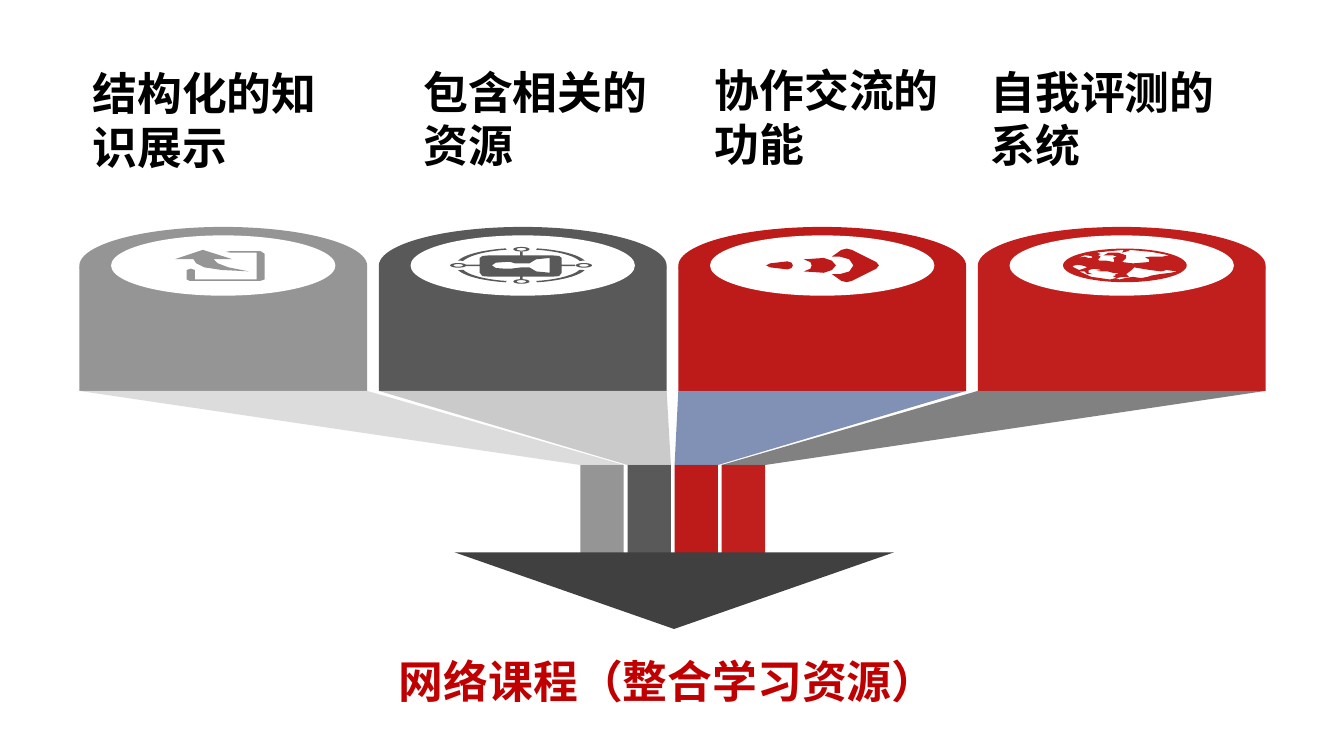
from math import cos, radians, sin

from lxml import etree
from pptx import Presentation
from pptx.dml.color import RGBColor
from pptx.enum.shapes import MSO_SHAPE
from pptx.enum.text import PP_ALIGN
from pptx.oxml.ns import qn
from pptx.util import Cm, Pt

RECTANGLE, OVAL = MSO_SHAPE.RECTANGLE, MSO_SHAPE.OVAL
LEFT, CENTER = PP_ALIGN.LEFT, PP_ALIGN.CENTER

COLORS = {
    "light": "959595", "dark": "595959", "red": "BD1A1A", "bright": "C11E1E",
    "pale": "D5D5D5", "silver": "BFBFBF", "blue": "6679A5", "gray": "666666",
    "white": "FFFFFF", "black": "000000", "arrow": "404040", "result": "C00000",
}
CJK_FONT = "Noto Sans CJK SC"
ICON_UNIT = 0.0254


def arc(cx, cy, rx, ry, start=0, end=360, step=6):
    return [(cx + rx * cos(radians(a)), cy + ry * sin(radians(a)))
            for a in range(start, end + 1, step)]


def box(left, top, right, bottom):
    return [(left, top), (right, top), (right, bottom), (left, bottom)]


SHARE = [
    [(197, 189), (197, 208), (194, 209), (141, 209), (139, 208), (139, 201), (142, 200),
     (145, 201), (145, 208), (191, 208), (191, 188), (171, 188), (168, 187.5),
     (171, 187), (194, 187)],
    [(173, 193), (151, 186), (130, 193), (144, 193), (146, 196), (152, 199), (165, 201),
     (185, 202), (170, 199), (162, 196), (159, 193)],
]
NETWORK = [
    [(365, 190), (410, 190), (416, 190.5), (418, 192), (418, 203), (416, 205.5),
     (410, 206), (365, 206), (359, 205.5), (357, 203), (357, 192), (359, 190.5)],
    [(409, 192), (399, 193), (394, 196), (388, 196), (383, 196), (380, 195), (376, 195),
     (369, 195.5), (366, 197.5), (369, 199.5), (376, 200), (380, 200), (388, 199),
     (394, 199), (399, 202), (409, 203)],
    box(387, 187, 389, 190), box(387, 206, 389, 208),
    box(347, 197, 357, 198), box(418, 197, 428, 198),
]
for cx, cy in [(388, 185.5), (388, 209.5), (341, 197.5), (434.5, 197.5)]:
    NETWORK += [arc(cx, cy, 6, 1.7), arc(cx, cy, 3.5, 1)]
for start in (16, 104, 196, 284):
    NETWORK.append(arc(388, 197.5, 49, 13, start, start + 60)
                   + arc(388, 197.5, 45, 12, start, start + 60)[::-1])
ROCKET = [
    [(626, 186), (619, 191), (625, 191), (632, 193), (635, 197.5), (632, 202), (625, 204),
     (619, 204), (626, 209), (630, 210), (634, 209), (652, 200), (654, 197.5), (652, 195),
     (634, 186), (630, 185)],
    [(590, 197.5), (589, 195.5), (586, 194.5), (573, 196), (570, 197.5), (573, 199),
     (586, 200.5), (589, 199.5)],
    [(622, 197.5), (619, 194), (613, 192), (598, 193), (603, 195), (604, 197.5), (603, 200),
     (598, 202), (613, 203), (619, 201)],
]
GLOBE = [
    arc(837, 197.5, 46, 12.5),
    [(810, 192), (807, 191), (802, 192), (807, 190), (812, 190.5), (813, 192)],
    [(850, 200), (856, 201), (864, 202), (868, 201), (876, 202), (871, 203), (863, 204),
     (857, 205), (854, 206), (849, 207), (843, 206), (837, 207), (833, 208), (830, 207),
     (826, 208), (812, 206), (803, 202), (807, 202), (809, 204), (813, 204), (810, 203),
     (810, 201), (814, 200), (820, 201), (816, 201.5), (819, 202), (824, 202), (828, 203),
     (833, 203), (830, 204), (830, 205), (828, 205.5), (831, 207), (833, 206.5), (836, 206),
     (840, 206), (838, 204), (842, 201), (844, 199)],
    [(802, 197), (807, 198), (809, 199), (803, 201), (799, 199), (798, 198)],
    [(839, 187), (841, 186), (857, 187.5), (870, 190), (865, 191), (856, 191), (852, 191.5),
     (855, 193), (855, 195), (843, 196), (835, 195), (838, 192), (838, 190), (832, 188),
     (825, 188), (821, 190), (828, 190), (831, 191), (828, 192), (829, 193), (829, 195),
     (823, 194), (818, 194), (817, 193), (819, 191), (817, 190), (819, 189), (816, 188),
     (825, 187), (836, 186), (835, 188)],
]

PILLARS = [
    {"label": "结构化的知识展示", "at": (1.5, 1.12, 5), "color": "light", "funnel": "pale",
     "icon": SHARE},
    {"label": "包含相关的资源", "at": (7.75, 1.09, 5.41), "color": "dark", "funnel": "silver",
     "icon": NETWORK},
    {"label": "协作交流的功能", "at": (13.26, 1.07, 5), "color": "red", "funnel": "blue",
     "icon": ROCKET},
    {"label": "自我评测的系统", "at": (18.47, 1.09, 5.44), "color": "bright", "funnel": "gray",
     "icon": GLOBE},
]
RESULT = "网络课程（整合学习资源）"

PILLAR_LEFT, PILLAR_PITCH, PILLAR_WIDTH = 1.5, 5.66, 5.44
PILLAR_TOP, PILLAR_BOTTOM = 5.05, 7.39
STEM_LEFT, STEM_PITCH, STEM_WIDTH = 10.97, 0.89, 0.82
STEM_TOP, STEM_HEIGHT = 8.79, 1.78
RIM_TOP, RIM_HEIGHT = 4.29, 1.47
FACE_TOP, FACE_WIDTH, FACE_HEIGHT = 4.45, 4.24, 1.14

deck = Presentation()
deck.slide_width, deck.slide_height = Cm(25.4), Cm(14.29)
slide = deck.slides.add_slide(deck.slide_layouts[6])


def paint(shape, color, opacity=100):
    shape.shadow.inherit = False
    shape.fill.solid()
    shape.fill.fore_color.rgb = RGBColor.from_string(COLORS[color])
    shape.line.fill.background()
    if opacity < 100:
        tint = shape.fill._xPr.find(qn("a:solidFill"))[0]
        etree.SubElement(tint, qn("a:alpha"), val=str(opacity * 1000))


def preset(kind, left, top, width, height, color):
    paint(slide.shapes.add_shape(kind, Cm(left), Cm(top), Cm(width), Cm(height)), color)


def outline(contours, color, unit=1, opacity=100):
    contours = [[(x * 100, y * 100) for x, y in points] for points in contours]
    builder = slide.shapes.build_freeform(*contours[0][0], scale=Cm(unit) / 100)
    builder.add_line_segments(contours[0][1:], close=True)
    for points in contours[1:]:
        builder.move_to(*points[0])
        builder.add_line_segments(points[1:], close=True)
    paint(builder.convert_to_shape(), color, opacity)


def write(text, left, top, width, height, font=CJK_FONT, color="black", align=LEFT,
          before=0, after=0):
    frame = slide.shapes.add_textbox(Cm(left), Cm(top), Cm(width), Cm(height)).text_frame
    frame.word_wrap = True
    paragraph = frame.paragraphs[0]
    paragraph.alignment = align
    paragraph.space_before, paragraph.space_after = Pt(before), Pt(after)
    run = paragraph.add_run()
    run.text = text
    run.font.name, run.font.size, run.font.bold = font, Pt(24), True
    run.font.color.rgb = RGBColor.from_string(COLORS[color])


for index, pillar in reversed(list(enumerate(PILLARS))):
    left = PILLAR_LEFT + index * PILLAR_PITCH
    stem = STEM_LEFT + index * STEM_PITCH
    color = pillar["color"]
    preset(RECTANGLE, left, PILLAR_TOP, PILLAR_WIDTH, PILLAR_BOTTOM - PILLAR_TOP, color)
    preset(RECTANGLE, stem, STEM_TOP, STEM_WIDTH, STEM_HEIGHT, color)
    outline([[(stem, STEM_TOP), (left, PILLAR_BOTTOM), (left + PILLAR_WIDTH, PILLAR_BOTTOM),
              (stem + STEM_WIDTH, STEM_TOP)]], pillar["funnel"], opacity=82)
    preset(OVAL, left, RIM_TOP, PILLAR_WIDTH, RIM_HEIGHT, color)
    preset(OVAL, left + (PILLAR_WIDTH - FACE_WIDTH) / 2, FACE_TOP, FACE_WIDTH, FACE_HEIGHT,
           "white")

outline([[(8.59, 10.44), (16.9, 10.44), (12.74, 11.89)]], "arrow")
for pillar in PILLARS:
    outline(pillar["icon"], pillar["color"], unit=ICON_UNIT)

write(RESULT, 3.12, 12.24, 19, 1.3, font="Arial", color="result", align=CENTER)
for pillar in PILLARS:
    write(pillar["label"], *pillar["at"], 2.31, before=4.8, after=6)

deck.save("out.pptx")
